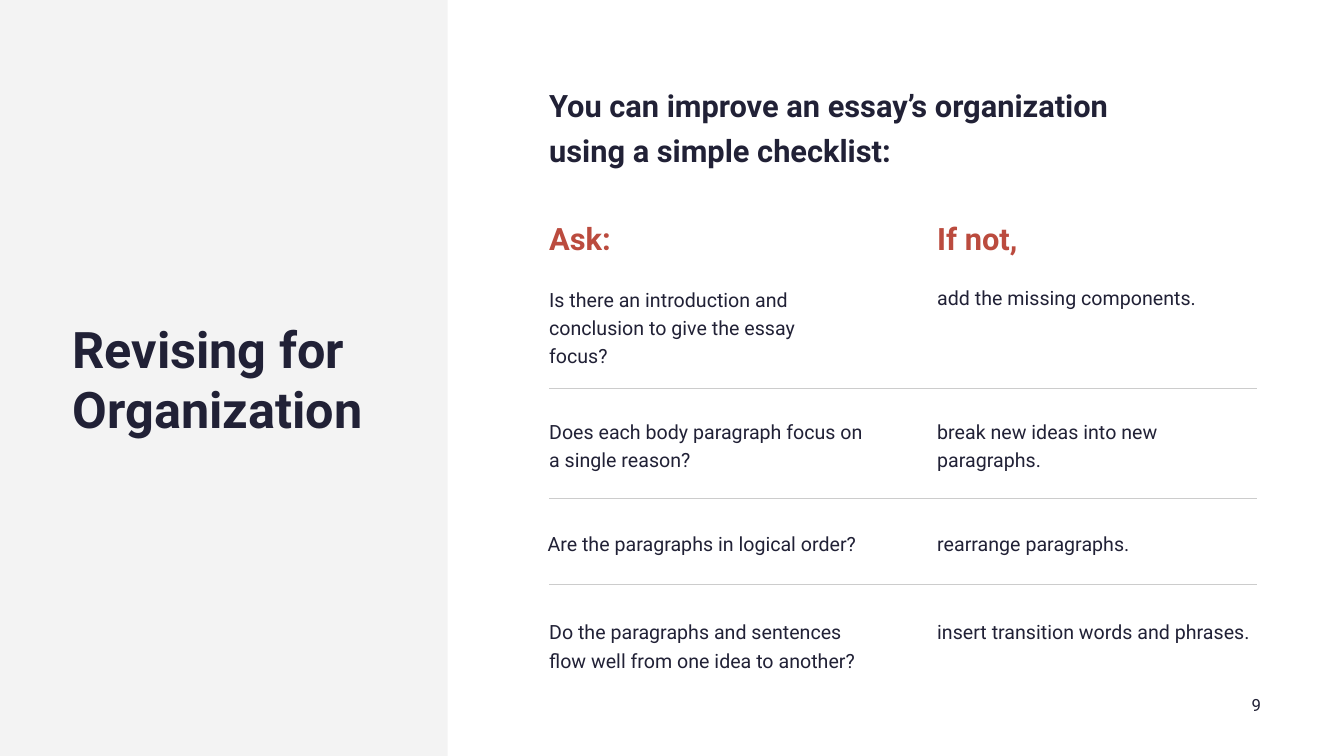
from dataclasses import dataclass

from lxml import etree
from pptx import Presentation
from pptx.dml.color import RGBColor
from pptx.enum.shapes import MSO_CONNECTOR, MSO_SHAPE
from pptx.enum.text import MSO_ANCHOR, PP_ALIGN
from pptx.oxml.ns import qn
from pptx.util import Cm, Pt

RECTANGLE = MSO_SHAPE.RECTANGLE
STRAIGHT = MSO_CONNECTOR.STRAIGHT
TOP, MIDDLE = MSO_ANCHOR.TOP, MSO_ANCHOR.MIDDLE
LEFT, RIGHT = PP_ALIGN.LEFT, PP_ALIGN.RIGHT


@dataclass(frozen=True)
class Theme:
    font: str = "Roboto"
    ink: RGBColor = RGBColor(0x21, 0x21, 0x36)
    accent: RGBColor = RGBColor(0xBB, 0x4B, 0x3E)
    panel: RGBColor = RGBColor(0xF3, 0xF3, 0xF3)
    rule: RGBColor = RGBColor(0xCC, 0xCC, 0xCC)
    title_size: int = 36
    heading_size: int = 22
    body_size: int = 14
    number_size: int = 12


THEME = Theme()
BLANK_LAYOUT = 6
SLIDE_WIDTH, SLIDE_HEIGHT = 33.87, 19.05

# All positions and lengths are in centimetres.
ASK_LEFT, ANSWER_LEFT, RULE_RIGHT = 13.84, 23.62, 31.67
COLUMN_WIDTH = 8.05
NARROW_WIDTH = 7.57

# Each row: question, its left, top and width; answer and its top; box height
CHECKLIST = [
    ("Is there an introduction and conclusion to give the essay focus?",
     ASK_LEFT, 7.01, NARROW_WIDTH, "add the missing components.", 6.96, 2.51),
    ("Does each body paragraph focus on a single reason?",
     ASK_LEFT, 10.34, COLUMN_WIDTH, "break new ideas into new paragraphs.", 10.34, 1.83),
    ("Are the paragraphs in logical order?",
     13.8, 13.16, COLUMN_WIDTH, "rearrange paragraphs.", 13.16, 1.37),
    ("Do the paragraphs and sentences flow well from one idea to another?",
     ASK_LEFT, 15.39, COLUMN_WIDTH, "insert transition words and phrases.", 15.39, 2.51),
]
RULE_TOPS = [9.8, 12.55, 14.73]


def add_panel(slide, width):
    shape = slide.shapes.add_shape(RECTANGLE, 0, 0, Cm(width), Cm(SLIDE_HEIGHT))
    shape.shadow.inherit = False
    shape.fill.solid()
    shape.fill.fore_color.rgb = THEME.panel
    shape.line.fill.background()


def add_text(slide, text, left, top, width, height, size=THEME.body_size,
             color=THEME.ink, bold=False, spacing=1.2, anchor=TOP,
             alignment=LEFT, side_inset=0):
    box = slide.shapes.add_textbox(Cm(left), Cm(top), Cm(width), Cm(height))
    frame = box.text_frame
    frame.word_wrap = True
    frame.vertical_anchor = anchor
    frame.margin_left = frame.margin_right = Cm(side_inset)
    paragraph = frame.paragraphs[0]
    paragraph.text = text
    paragraph.alignment = alignment
    paragraph.line_spacing = spacing
    paragraph.font.name = THEME.font
    paragraph.font.size = Pt(size)
    paragraph.font.bold = bold
    paragraph.font.color.rgb = color


def add_heading(slide, text, left, top, width, height, color=THEME.ink):
    add_text(slide, text, left, top, width, height,
             size=THEME.heading_size, color=color, bold=True)


def add_rule(slide, top):
    connector = slide.shapes.add_connector(
        STRAIGHT, Cm(ASK_LEFT), Cm(top), Cm(RULE_RIGHT), Cm(top))
    connector.line.color.rgb = THEME.rule
    connector.line.width = Pt(0.75)
    etree.SubElement(connector._element.spPr, qn("a:effectLst"))


def add_checklist(slide):
    add_heading(slide, "Ask:", ASK_LEFT, 5.23, NARROW_WIDTH, 1.3, THEME.accent)
    add_heading(slide, "If not,", ANSWER_LEFT, 5.23, COLUMN_WIDTH, 1.3, THEME.accent)
    for question, left, top, width, answer, answer_top, height in CHECKLIST:
        add_text(slide, question, left, top, width, height)
        add_text(slide, answer, ANSWER_LEFT, answer_top, COLUMN_WIDTH, height)
    for top in RULE_TOPS:
        add_rule(slide, top)


def main():
    presentation = Presentation()
    presentation.slide_width = Cm(SLIDE_WIDTH)
    presentation.slide_height = Cm(SLIDE_HEIGHT)
    slide = presentation.slides.add_slide(presentation.slide_layouts[BLANK_LAYOUT])

    add_panel(slide, 11.28)
    add_text(slide, "Revising for Organization", 1.83, 7.57, COLUMN_WIDTH, 3.94,
             size=THEME.title_size, bold=True, spacing=1.0, anchor=MIDDLE)
    add_heading(slide, "You can improve an essay’s organization using a simple checklist:",
                ASK_LEFT, 1.88, 16.03, 2.51)
    add_checklist(slide)
    add_text(slide, "9", 24.41, 17.25, 7.62, 1.02, size=THEME.number_size,
             spacing=1.0, anchor=MIDDLE, alignment=RIGHT, side_inset=0.25)

    presentation.save("out.pptx")


if __name__ == "__main__":
    main()
